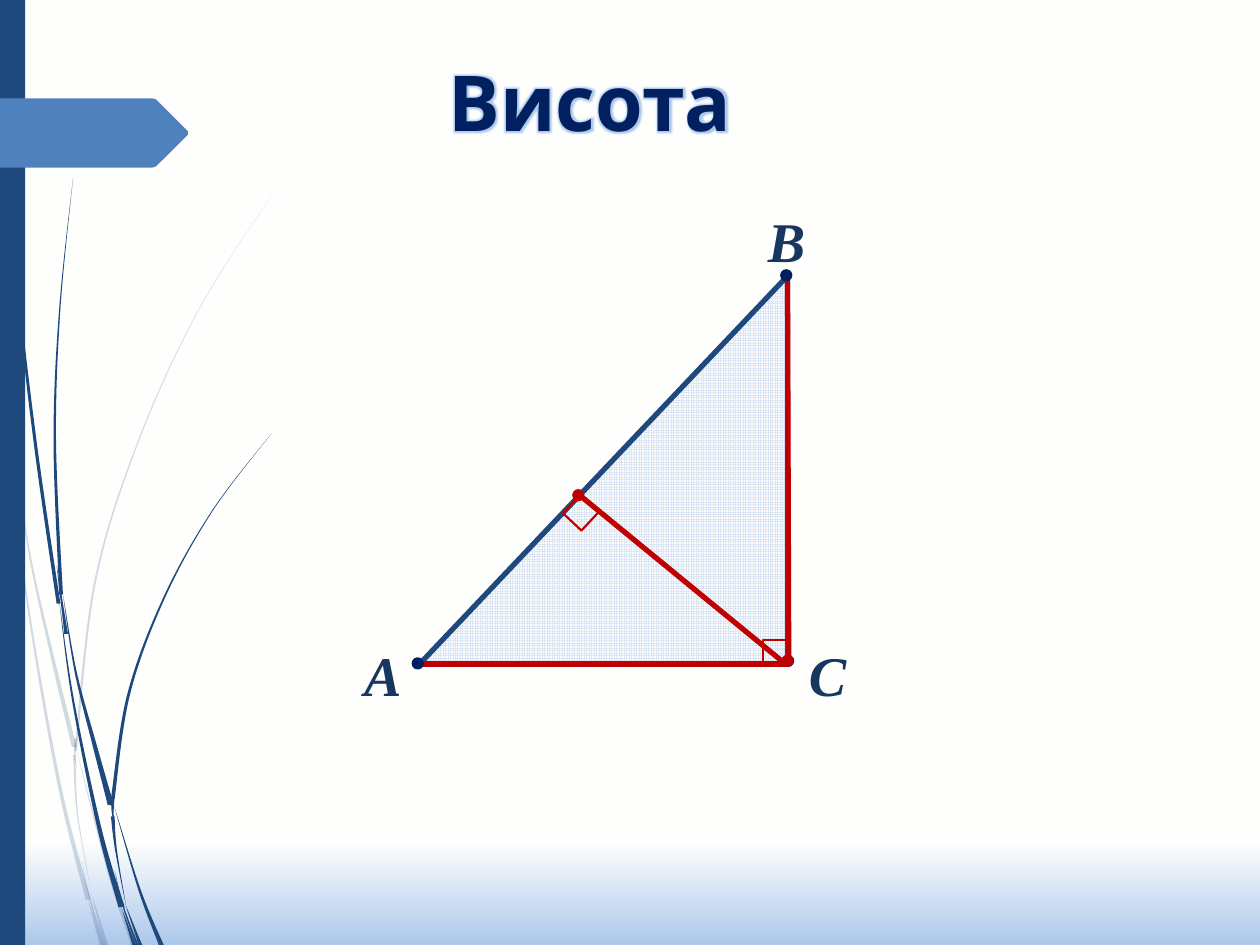
from dataclasses import dataclass

from lxml import etree
from pptx import Presentation
from pptx import util as u
from pptx.dml.color import RGBColor
from pptx.enum import dml, shapes, text
from pptx.oxml.ns import qn

WIDTH, HEIGHT = u.Inches(10), u.Inches(7.5)
COLUMNS, ROWS = 100, 75


@dataclass(frozen=True)
class Theme:
    """Colours, fonts and sizes of the slide."""
    paper: str = "FEFEFD"
    sky: str = "ADC8EB"
    stem: str = "1F497D"
    banner: str = "4F81BD"
    navy: str = "002060"
    outline: str = "254061"
    letter: str = "17375E"
    mesh: str = "DCE6F2"
    white: str = "FFFFFF"
    red: str = "C00000"
    title_font: str = "Quicksand"
    letter_font: str = "Times New Roman"
    title_size: float = 44
    letter_size: float = 32
    side: float = 3
    thin: float = 1.25


THEME = Theme()

# Each blade part: width at its top, width at its foot, grid points of its spine.
PALE_BLADES = [
    (0.25, 0, [(0.1, 29), (0.75, 35)]),
    (0, 0.4, [(1, 34.5), (2.3, 43.7), (4.15, 52.1), (5.9, 59.3)]),
    (0, 0.4, [(6.1, 59.6), (8.65, 69.3), (10.6, 75)]),
    (0, 0.4, [(0.8, 35), (2.05, 46.9), (4.65, 62), (7, 71.4)]),
    (0, 0.3, [(7, 71.4), (8.05, 75)]),
    (0, 0.2, [(21.7, 15.3), (15.85, 24.45), (11.05, 34.85), (7.55, 46.15), (6, 59.6)]),
    (0.2, 0, [(6, 58.6), (5.95, 59.9), (6.1, 61)]),
    (0.2, 0, [(5.9, 59.9), (6.15, 64.6), (7.3, 71.1)]),
    (0, 0.2, [(6.5, 68.3), (7.1, 71.2), (8.25, 75)]),
    (0, 0.3, [(7.3, 71.1), (8.45, 75)]),
]
DARK_BLADES = [
    (0.1, 0.3, [(0.25, 0), (0.55, 11), (1.45, 23.3), (2.85, 35.5), (4.65, 47.9)]),
    (0, 0.5, [(4.7, 47.7), (5.8, 55.6), (7.9, 65.8), (9.65, 72)]),
    (0, 0.3, [(9.7, 72.2), (10.65, 75)]),
    (0, 0.3, [(5.8, 14.1), (4.75, 24.5), (4.35, 34.9), (4.85, 47.2)]),
    (0, 0.3, [(4.5, 44.9), (5.25, 50.3)]),
    (0, 0.5, [(5, 47.2), (6, 53.3), (7.5, 59.1), (8.8, 63.9)]),
    (0, 0.4, [(9.1, 64.1), (11.1, 70.7), (12.8, 75)]),
    (0, 0.3, [(21.55, 34.4), (16.85, 40.55), (13, 47.5), (10.2, 55.15), (8.95, 63.4)]),
    (0.3, 0, [(8.95, 63.3), (8.95, 64.5), (9.1, 65.6)]),
    (0.3, 0, [(8.95, 64.8), (9.2, 67.4), (10, 71.9)]),
    (0, 0.2, [(9.1, 69.1), (9.8, 72), (10.9, 75)]),
    (0, 0.3, [(10, 71.9), (11.15, 75)]),
]
BANNER = [(0, 7.8), (12.1, 7.8), (12.4, 7.9), (14.9, 10.4),
          (14.9, 10.7), (12.4, 13.2), (12.1, 13.3), (0, 13.3)]


def x(column):
    """Horizontal place of a grid column."""
    return round(WIDTH * column / COLUMNS)


def y(row):
    """Vertical place of a grid row."""
    return round(HEIGHT * row / ROWS)


def box(left, top, width, height):
    """Place and size of a grid cell range."""
    return x(left), y(top), x(width), y(height)


def rgb(code):
    """Colour from its hexadecimal code."""
    return RGBColor.from_string(code)


def assign(target, values):
    """Set every attribute named in a dict."""
    for key, value in values.items():
        setattr(target, key, value)


def dress(shape, fill=None, line=None, width=THEME.thin):
    """Give a shape its fill and outline, without shadow."""
    shape.shadow.inherit = False
    for paint, colour in ((shape.fill, fill), (shape.line.fill, line)):
        if colour:
            paint.solid()
            paint.fore_color.rgb = rgb(colour)
        else:
            paint.background()
    if line:
        shape.line.width = u.Pt(width)
    return shape


def add_outline(slide, points, fill):
    """Draw a closed outline through grid points."""
    start, *rest = [(x(column), y(row)) for column, row in points]
    builder = slide.shapes.build_freeform(*start)
    builder.add_line_segments(rest, close=True)
    return dress(builder.convert_to_shape(), fill)


def bezier_points(knots):
    """First knot, then two controls and an end for each smooth stretch."""
    padded = [knots[0], *knots, knots[-1]]
    points = [knots[0]]
    for a, b, c, d in zip(padded, padded[1:], padded[2:], padded[3:]):
        points.append(tuple(q + (r - p) / 6 for p, q, r in zip(a, b, c)))
        points.append(tuple(r - (s - q) / 6 for q, r, s in zip(b, c, d)))
        points.append(c)
    return points


def add_blade(slide, top_width, foot_width, knots, opacity):
    """Draw a curved part of a grass blade."""
    spine = bezier_points(knots)
    last = len(spine) - 1
    half = [(top_width + (foot_width - top_width) * i / last) / 2 for i in range(last + 1)]
    left = [(c - h, r) for (c, r), h in zip(spine, half)]
    right = [(c + h, r) for (c, r), h in zip(spine, half)]
    blade = add_outline(slide, left + right[::-1], THEME.stem)
    lines = list(blade._element.iter(qn("a:lnTo")))
    for first in (*range(0, last, 3), *range(last + 1, 2 * last + 1, 3)):
        curve = etree.Element(qn("a:cubicBezTo"))
        lines[first].addprevious(curve)
        for line in lines[first:first + 3]:
            curve.append(line[0])
            line.getparent().remove(line)
    if opacity < 100:
        colour = blade.fill._xPr.find(qn("a:solidFill"))[0]
        etree.SubElement(colour, qn("a:alpha"), val=str(opacity * 1000))


def add_preset(slide, kind, place, **look):
    """Draw a preset shape on the grid."""
    return dress(slide.shapes.add_shape(kind, *box(*place)), **look)


def add_segment(slide, start, end):
    """Draw a red side or altitude."""
    segment = slide.shapes.add_connector(
        shapes.MSO_CONNECTOR.STRAIGHT, x(start[0]), y(start[1]), x(end[0]), y(end[1]))
    assign(segment.line, dict(width=u.Pt(THEME.side)))
    segment.line.color.rgb = rgb(THEME.red)
    etree.SubElement(segment._element.spPr, qn("a:effectLst"))


def write(frame, words, colour, **font):
    """Write one formatted run into a text frame."""
    run = frame.paragraphs[0].add_run()
    run.text = words
    assign(run.font, dict(font, bold=True))
    run.font.color.rgb = rgb(colour)
    return run._r.get_or_add_rPr()


def add_letter(slide, letter, left, top):
    """Name a vertex of the triangle."""
    frame = slide.shapes.add_textbox(*box(left, top, 3, 5.4)).text_frame
    assign(frame, dict(margin_left=0, margin_top=0, margin_right=0, margin_bottom=0,
                       word_wrap=False, auto_size=text.MSO_AUTO_SIZE.SHAPE_TO_FIT_TEXT))
    write(frame, letter, THEME.letter, name=THEME.letter_font,
          size=u.Pt(THEME.letter_size), italic=True)


def write_title(slide, words):
    """Fill the title placeholder with outlined, softly glowing words."""
    title = slide.shapes.title
    assign(title, dict(zip(("left", "top", "width", "height"), box(17.6, 3.8, 58.5, 8.4))))
    assign(title.text_frame, dict(word_wrap=True, vertical_anchor=text.MSO_ANCHOR.TOP,
                                  auto_size=text.MSO_AUTO_SIZE.SHAPE_TO_FIT_TEXT))
    title.text_frame.paragraphs[0].alignment = text.PP_ALIGN.CENTER
    properties = write(title.text_frame, words, THEME.navy,
                       name=THEME.title_font, size=u.Pt(THEME.title_size))
    edge = etree.Element(qn("a:ln"), w=str(u.Pt(0.75)))
    paint = etree.SubElement(edge, qn("a:solidFill"))
    etree.SubElement(paint, qn("a:srgbClr"), val=THEME.outline)
    properties.insert(0, edge)
    effects = etree.Element(qn("a:effectLst"))
    glow = etree.SubElement(effects, qn("a:glow"), rad=str(u.Pt(4)))
    etree.SubElement(glow, qn("a:srgbClr"), val=THEME.sky)
    properties.find(qn("a:solidFill")).addnext(effects)


def paint_background(slide):
    """Fade the paper colour into blue at the foot."""
    fill = slide.background.fill
    fill.gradient()
    fill.gradient_angle = 270
    for stop, position, colour in zip(fill.gradient_stops, (0.89, 1), (THEME.paper, THEME.sky)):
        stop.position = position
        stop.color.rgb = rgb(colour)


def draw_decoration(slide):
    """Draw the grass, the side bar and the banner."""
    for opacity, blades in ((20, PALE_BLADES), (100, DARK_BLADES)):
        for blade in blades:
            add_blade(slide, *blade, opacity)
    add_preset(slide, shapes.MSO_SHAPE.RECTANGLE, (0, 0, 2, ROWS), fill=THEME.stem)
    add_outline(slide, BANNER, THEME.banner)


def draw_triangle(slide):
    """Draw the right triangle with its altitude."""
    kinds = shapes.MSO_SHAPE
    triangle = add_preset(slide, kinds.ISOSCELES_TRIANGLE, (33.3, 21.9, 29.2, 30.8),
                          line=THEME.stem, width=THEME.side)
    triangle.adjustments[0] = 1
    triangle.fill.patterned()
    triangle.fill.pattern = dml.MSO_PATTERN.SMALL_GRID
    triangle.fill.fore_color.rgb = rgb(THEME.mesh)
    triangle.fill.back_color.rgb = rgb(THEME.white)
    for letter, left, top in (("А", 28.9, 50.8), ("В", 60.95, 16.4), ("С", 64.2, 50.8)):
        add_letter(slide, letter, left, top)
    for ends in (((62.5, 21.9), (62.6, 52.3)), ((33.5, 52.7), (62.5, 52.7)),
                 ((46, 39.3), (62.1, 52.5))):
        add_segment(slide, *ends)
    for left, top, turn in ((60.55, 50.8, 0), (45.1, 39.7, 43)):
        add_preset(slide, kinds.RECTANGLE, (left, top, 2, 2), line=THEME.red).rotation = turn
    for left, top, colour in ((62, 21.45, THEME.navy), (62.15, 52.05, THEME.navy),
                              (62.1, 52.05, THEME.red), (45.5, 38.9, THEME.red),
                              (32.75, 52.25, THEME.navy)):
        add_preset(slide, kinds.FLOWCHART_CONNECTOR, (left, top, 0.8, 0.8),
                   fill=colour, line=colour)


def main():
    """Build the slide and save it."""
    deck = Presentation()
    assign(deck, dict(slide_width=WIDTH, slide_height=HEIGHT))
    slide = deck.slides.add_slide(deck.slide_layouts[5])
    paint_background(slide)
    draw_decoration(slide)
    write_title(slide, "Висота")
    draw_triangle(slide)
    deck.save("out.pptx")


if __name__ == "__main__":
    main()
